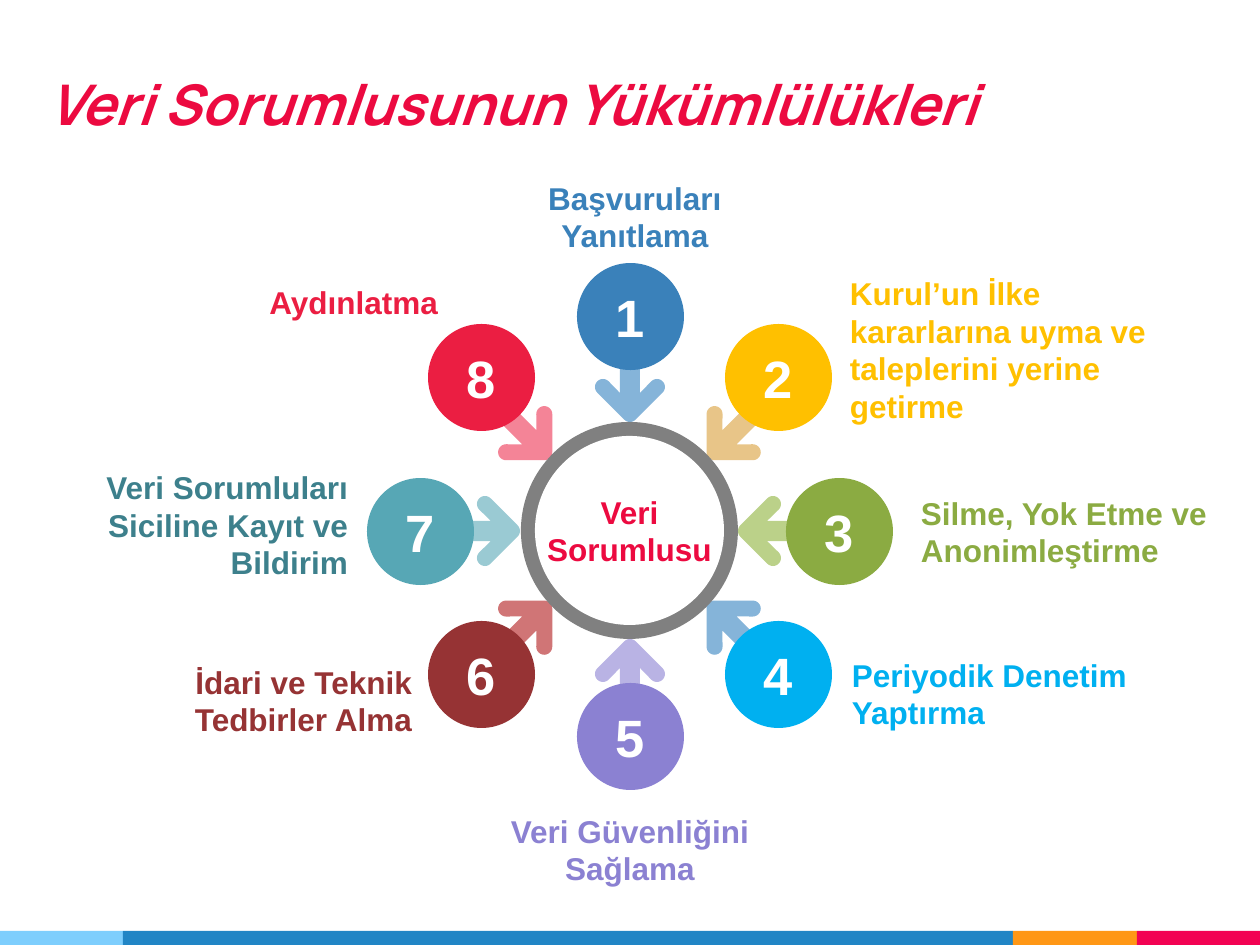
from math import cos, radians, sin

from pptx import Presentation
from pptx.dml.color import RGBColor
from pptx.enum.shapes import MSO_SHAPE as Shape
from pptx.enum.text import MSO_ANCHOR as Anchor, MSO_AUTO_SIZE as AutoSize, PP_ALIGN as Align
from pptx.util import Pt

PX = 914400 // 126

WHITE = RGBColor(0xFF, 0xFF, 0xFF)
GREY = RGBColor(0x80, 0x80, 0x80)
CRIMSON = RGBColor(0xEC, 0x0A, 0x40)
BLUE = RGBColor(0x3A, 0x81, 0xBA)
LIGHT_BLUE = RGBColor(0x85, 0xB4, 0xD9)
YELLOW = RGBColor(0xFF, 0xC0, 0x00)
SAND = RGBColor(0xE8, 0xC5, 0x88)
GREEN = RGBColor(0x8B, 0xAB, 0x42)
LIGHT_GREEN = RGBColor(0xBB, 0xD1, 0x89)
CYAN = RGBColor(0x00, 0xB0, 0xF0)
PURPLE = RGBColor(0x8B, 0x81, 0xD2)
LILAC = RGBColor(0xB9, 0xB3, 0xE4)
MAROON = RGBColor(0x96, 0x33, 0x34)
ROSE = RGBColor(0xD0, 0x75, 0x76)
TEAL = RGBColor(0x57, 0xA7, 0xB5)
DARK_TEAL = RGBColor(0x3D, 0x80, 0x8C)
LIGHT_TEAL = RGBColor(0x9A, 0xCA, 0xD3)
RED = RGBColor(0xEB, 0x1E, 0x42)
PINK = RGBColor(0xF4, 0x84, 0x97)
BAR_SKY = RGBColor(0x7E, 0xCE, 0xFD)
BAR_BLUE = RGBColor(0x21, 0x85, 0xC5)
BAR_ORANGE = RGBColor(0xFF, 0x97, 0x15)
BAR_PINK = RGBColor(0xF2, 0x02, 0x53)

presentation = Presentation()
presentation.slide_width = 1260 * PX
presentation.slide_height = 945 * PX
slide = presentation.slides.add_slide(presentation.slide_layouts[6])
shapes = slide.shapes


def paint(shape, color):
    shape.shadow.inherit = False
    shape.fill.solid()
    shape.fill.fore_color.rgb = color
    shape.line.fill.background()


def write(shape, text, size, color, align, anchor=Anchor.MIDDLE, font="Arial", margins=(0, 6)):
    frame = shape.text_frame
    frame.text = text
    frame.word_wrap = True
    frame.vertical_anchor = anchor
    frame.margin_left = frame.margin_right = margins[0] * PX
    frame.margin_top = frame.margin_bottom = margins[1] * PX
    paragraph = frame.paragraphs[0]
    paragraph.alignment = align
    for run in paragraph.runs:
        run.font.name = font
        run.font.size = Pt(size)
        run.font.bold = True
        run.font.color.rgb = color


# Footer bars
for left, right, color in [
    (0, 123, BAR_SKY), (123, 1013, BAR_BLUE), (1013, 1137, BAR_ORANGE), (1137, 1260, BAR_PINK),
]:
    bar = shapes.add_shape(Shape.RECTANGLE, left * PX, 931 * PX, (right - left) * PX, 14 * PX)
    paint(bar, color)

# Title
title = shapes.add_textbox(35 * PX, 39 * PX, 1211 * PX, 111 * PX)
write(title, "Veri Sorumlusunun Yükümlülükleri", 32, CRIMSON, Align.LEFT,
      Anchor.BOTTOM, "Manrope", (13, 13))
title.text_frame.paragraphs[0].runs[0].font.italic = True

# Arrow outline pointing down with its tip at (0, 0): shaft, then three round ends
outline = [(-10, -58), (10, -58), (10, -29)]
for center_x, center_y, start, end in [(27, -35, -135, 45), (0, -8, 45, 135), (-27, -35, 135, 315)]:
    for angle in range(start, end + 1, 15):
        outline.append((center_x + 8 * cos(radians(angle)), center_y + 8 * sin(radians(angle))))
outline.append((-10, -29))

# Arrows, clockwise from the top
for index, (tip_x, tip_y, color) in enumerate([
    (630, 422, LIGHT_BLUE), (709, 458, SAND), (738, 531, LIGHT_GREEN), (709, 603, LIGHT_BLUE),
    (630, 639, LILAC), (550, 603, ROSE), (520, 531, LIGHT_TEAL), (550, 458, PINK),
]):
    turn = radians(45 * index)
    points = [
        ((tip_x + x * cos(turn) - y * sin(turn)) * PX, (tip_y + x * sin(turn) + y * cos(turn)) * PX)
        for x, y in outline
    ]
    builder = shapes.build_freeform(*points[0])
    builder.add_line_segments(points[1:], close=True)
    paint(builder.convert_to_shape(), color)

# Central ring
for diameter, color in [(217, GREY), (189, WHITE)]:
    disc = shapes.add_shape(Shape.OVAL, (1259 - diameter) * PX // 2, (1061 - diameter) * PX // 2,
                            diameter * PX, diameter * PX)
    paint(disc, color)
write(disc, "Veri\vSorumlusu", 18, CRIMSON, Align.CENTER)
disc.text_frame.word_wrap = False

# Numbered circles, clockwise from the top
for number, (center_x, center_y, color) in enumerate([
    (630, 316, BLUE), (778, 377, YELLOW), (839, 531, GREEN), (778, 674, CYAN),
    (630, 736, PURPLE), (481, 674, MAROON), (420, 531, TEAL), (481, 377, RED),
], 1):
    circle = shapes.add_shape(Shape.OVAL, (center_x - 53) * PX, (center_y - 53) * PX,
                              107 * PX, 107 * PX)
    paint(circle, color)
    write(circle, str(number), 30, WHITE, Align.CENTER, margins=(9, 5))

# Labels
for left, top, height, text, color, align in [
    (483, 172, 89, "Başvuruları Yanıtlama", BLUE, Align.CENTER),
    (850, 267, 165, "Kurul’un İlke kararlarına uyma ve taleplerini yerine getirme",
     YELLOW, Align.LEFT),
    (921, 487, 89, "Silme, Yok Etme ve Anonimleştirme", GREEN, Align.LEFT),
    (852, 649, 89, "Periyodik Denetim Yaptırma", CYAN, Align.LEFT),
    (478, 805, 89, "Veri Güvenliğini Sağlama", PURPLE, Align.CENTER),
    (108, 656, 89, "İdari ve Teknik Tedbirler Alma", MAROON, Align.RIGHT),
    (44, 461, 127, "Veri Sorumluları Siciline Kayıt ve Bildirim", DARK_TEAL, Align.RIGHT),
    (134, 276, 51, "Aydınlatma", RED, Align.RIGHT),
]:
    label = shapes.add_textbox(left * PX, top * PX, 304 * PX, height * PX)
    write(label, text, 18, color, align)
    label.text_frame.auto_size = AutoSize.SHAPE_TO_FIT_TEXT

presentation.save("out.pptx")
